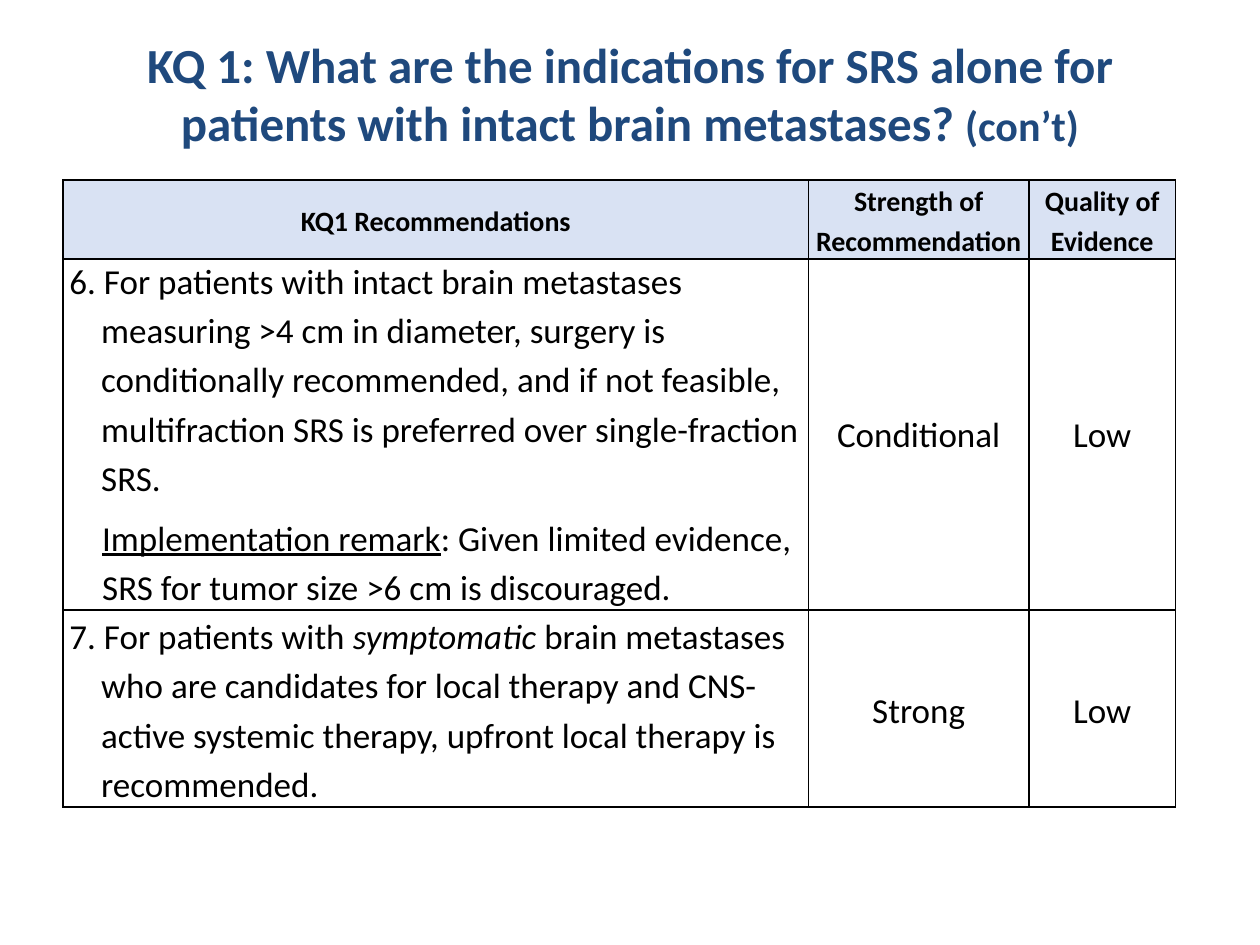
import pptx
import pptx.dml.color
import pptx.enum.text
import pptx.oxml
import pptx.oxml.ns
import pptx.util
from pptx.util import Cm

COLORS = {"title": "1F497D", "text": "000000", "border": "000000", "header": "D9E2F3"}
FONT = "Calibri"
LEFT = Cm(1.27)
COL_WIDTHS = [Cm(15.03), Cm(4.44), Cm(2.96)]
HANGING = {"margin": Cm(0.64), "indent": Cm(-0.64)}
REMARK = {"margin": Cm(0.66)}
CENTER = pptx.enum.text.PP_ALIGN.CENTER
MIDDLE = pptx.enum.text.MSO_ANCHOR.MIDDLE
TOP = pptx.enum.text.MSO_ANCHOR.TOP


def rgb(name):
    return pptx.dml.color.RGBColor.from_string(COLORS[name])


def add_run(p, text, size=20, color="text", bold=False, italic=False, underline=False):
    r = p.add_run()
    r.text = text
    f = r.font
    f.name, f.size = FONT, pptx.util.Pt(size)
    f.bold, f.italic, f.underline = bold, italic, underline
    f.color.rgb = rgb(color)


def format_paragraph(p, align=None, margin=0, indent=0, after=0):
    p.alignment = align
    p.line_spacing = 1.15
    p.space_after = pptx.util.Pt(after)
    pPr = p._p.get_or_add_pPr()
    pPr.set("marL", str(int(margin)))
    pPr.set("indent", str(int(indent)))


def add_borders(cell):
    tcPr = cell._tc.get_or_add_tcPr()
    for i, side in enumerate(("lnL", "lnR", "lnT", "lnB")):
        ln = pptx.oxml.parse_xml(
            f'<a:{side} {pptx.oxml.ns.nsdecls("a")} w="12700"><a:solidFill>'
            f'<a:srgbClr val="{COLORS["border"]}"/></a:solidFill></a:{side}>'
        )
        tcPr.insert(i, ln)


def fill_cell(cell, paragraphs, anchor=MIDDLE, fill=None):
    cell.margin_left = cell.margin_right = Cm(0.13)
    cell.margin_top = cell.margin_bottom = 0
    cell.vertical_anchor = anchor
    if fill:
        cell.fill.solid()
        cell.fill.fore_color.rgb = rgb(fill)
    else:
        cell.fill.background()
    add_borders(cell)
    tf = cell.text_frame
    for i, (runs, layout) in enumerate(paragraphs):
        p = tf.add_paragraph() if i else tf.paragraphs[0]
        format_paragraph(p, **layout)
        for text, style in runs:
            add_run(p, text, **style)


def add_grid(s, top, heights):
    frame = s.shapes.add_table(len(heights), len(COL_WIDTHS), LEFT, top, sum(COL_WIDTHS), sum(heights))
    table = frame.table
    table.first_row = table.horz_banding = False
    for col, width in zip(table.columns, COL_WIDTHS):
        col.width = width
    for row, height in zip(table.rows, heights):
        row.height = height
    return table


def add_title(s):
    sp = s.shapes.title
    sp.left, sp.top, sp.width, sp.height = LEFT, Cm(0.56), Cm(22.86), Cm(2.54)
    tf = sp.text_frame
    tf.word_wrap = True
    tf.auto_size = pptx.enum.text.MSO_AUTO_SIZE.NONE
    tf.vertical_anchor = TOP
    p = tf.paragraphs[0]
    p.alignment = CENTER
    add_run(p, "KQ 1: What are the indications for SRS alone for patients with intact brain metastases? ",
            size=28, color="title", bold=True)
    add_run(p, "(con’t)", size=24, color="title", bold=True)


def add_recommendations(s):
    rows = [
        ([([("6. For patients with intact brain metastases measuring >4 cm in diameter, surgery is "
             "conditionally recommended, and if not feasible, multifraction SRS is preferred over "
             "single-fraction SRS.", {})], {**HANGING, "after": 6}),
          ([("Implementation remark", {"underline": True}),
            (": Given limited evidence, SRS for tumor size >6 cm is discouraged.", {})], REMARK)],
         "Conditional", "Low"),
        ([([("7. For patients with ", {}),
            ("symptomatic", {"italic": True}),
            (" brain metastases who are candidates for local therapy and CNS-active systemic therapy, "
             "upfront local therapy is recommended.", {})], HANGING)],
         "Strong", "Low"),
    ]
    table = add_grid(s, Cm(5.13), [Cm(7.14), Cm(3.96)])
    for i, (recommendation, *ratings) in enumerate(rows):
        fill_cell(table.cell(i, 0), recommendation, anchor=TOP)
        for j, rating in enumerate(ratings, 1):
            fill_cell(table.cell(i, j), [([(rating, {})], {"align": CENTER})])


def add_header(s):
    table = add_grid(s, Cm(3.63), [Cm(1.52)])
    headings = ["KQ1 Recommendations", "Strength of Recommendation", "Quality of Evidence"]
    for j, heading in enumerate(headings):
        runs = [(heading, {"size": 16, "bold": True})]
        fill_cell(table.cell(0, j), [(runs, {"align": CENTER})], fill="header")


def main():
    prs = pptx.Presentation()
    prs.slide_width, prs.slide_height = Cm(25.4), Cm(19.05)
    s = prs.slides.add_slide(prs.slide_layouts[5])
    add_title(s)
    add_recommendations(s)
    add_header(s)
    prs.save("out.pptx")


if __name__ == "__main__":
    main()
